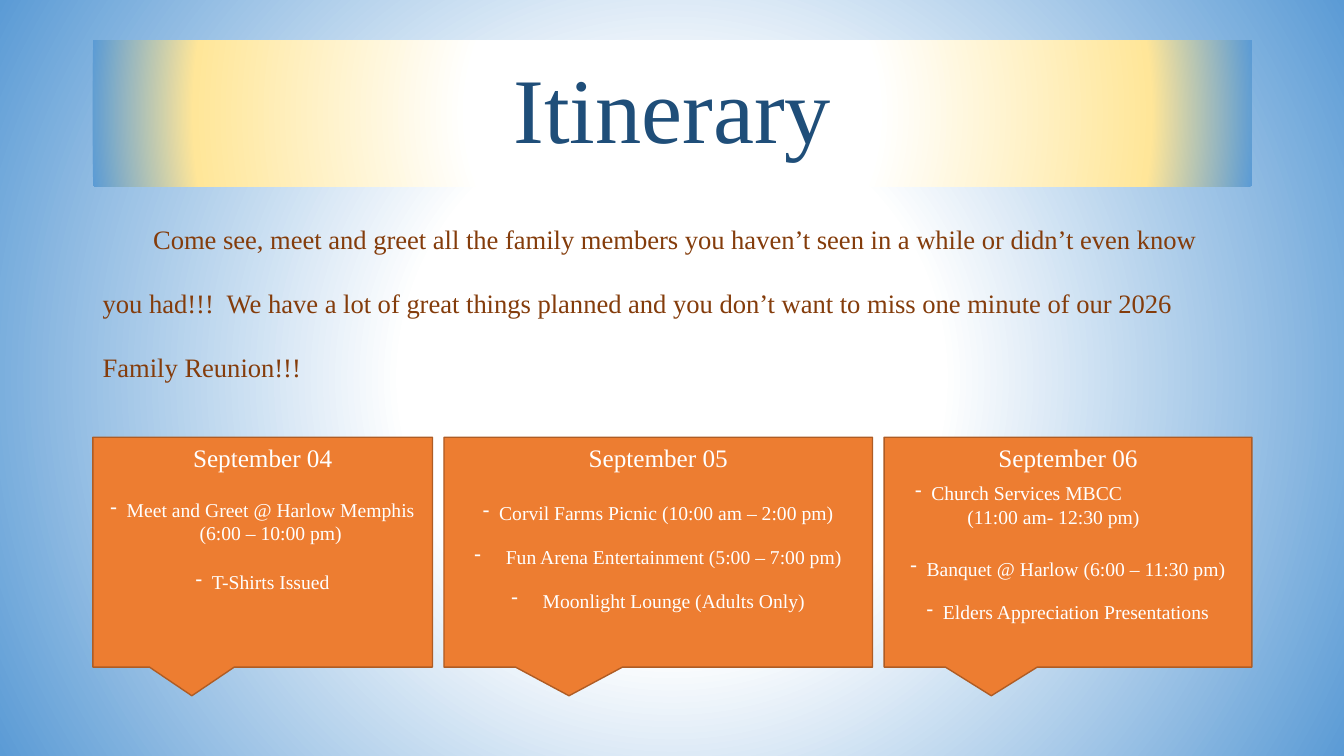
from dataclasses import dataclass

from lxml.etree import SubElement
from pptx import Presentation
from pptx.dml.color import RGBColor
from pptx.enum.shapes import MSO_SHAPE
from pptx.enum.text import MSO_ANCHOR, PP_ALIGN
from pptx.oxml import parse_xml
from pptx.oxml.ns import nsdecls, qn
from pptx.util import Cm, Pt

FONT = "Times New Roman"
WHITE = RGBColor(0xFF, 0xFF, 0xFF)
SKY = RGBColor(0x5B, 0x9B, 0xD5)
CREAM = RGBColor(0xFF, 0xE6, 0x99)
NAVY = RGBColor(0x1F, 0x4E, 0x79)
BROWN = RGBColor(0x84, 0x3C, 0x0B)
ORANGE = RGBColor(0xED, 0x7D, 0x31)
RUST = RGBColor(0xAF, 0x5C, 0x24)

LEFT, WIDTH = 2.34, 29.21
DAY_TOP, DAY_HEIGHT, DAY_GAP = 11.02, 5.79, 0.29
DASH, WIDE_DASH = 0.41, 0.79

INVITATION = (
    "Come see, meet and greet all the family members you haven’t seen in a while "
    "or didn’t even know you had!!!  We have a lot of great things planned and you "
    "don’t want to miss one minute of our 2026 Family Reunion!!!"
)


@dataclass
class Event:
    text: str
    before: float = 6
    after: float = 0
    spacing: float = 1.5
    dash: float = DASH  # hanging width in cm, 0 for no dash
    margin: float = 0  # extra left margin in cm
    align: PP_ALIGN = PP_ALIGN.CENTER


# Each day: heading, callout width in cm, events
DAYS = [
    ("September 04", 8.56, [
        Event("Meet and Greet @ Harlow Memphis (6:00 – 10:00 pm)", 12, 6, 1),
        Event("T-Shirts Issued", 12, 6, 1),
    ]),
    ("September 05", 10.8, [
        Event("Corvil Farms Picnic (10:00 am – 2:00 pm)"),
        Event("Fun Arena Entertainment (5:00 – 7:00 pm)", dash=WIDE_DASH),
        Event("Moonlight Lounge (Adults Only)", dash=WIDE_DASH),
    ]),
    ("September 06", 9.27, [
        Event("Church Services MBCC", 0, 0, 1, margin=0.53, align=PP_ALIGN.LEFT),
        Event("(11:00 am- 12:30 pm)", 0, 6, 1, dash=0, margin=1.85, align=PP_ALIGN.LEFT),
        Event("Banquet @ Harlow (6:00 – 11:30 pm)"),
        Event("Elders Appreciation Presentations"),
    ]),
]


def set_circular_gradient(properties, stops):
    """Replace the solid fill by a gradient running out from the centre."""
    stop_xml = "".join(
        f'<a:gs pos="{percent * 1000}"><a:srgbClr val="{color}"/></a:gs>'
        for percent, color in stops
    )
    gradient = parse_xml(
        f'<a:gradFill {nsdecls("a")} rotWithShape="1"><a:gsLst>{stop_xml}</a:gsLst>'
        '<a:path path="circle">'
        '<a:fillToRect l="50000" t="50000" r="50000" b="50000"/></a:path></a:gradFill>'
    )
    properties.replace(properties.find(qn("a:solidFill")), gradient)


def set_indent(paragraph, margin, first_line, dash=False):
    properties = paragraph._p.get_or_add_pPr()
    properties.set("marL", str(Cm(margin)))
    properties.set("indent", str(Cm(first_line)))
    if dash:
        SubElement(properties, qn("a:buChar")).set("char", "-")


def add_text(paragraph, text, size, color, align=PP_ALIGN.CENTER):
    paragraph.alignment = align
    run = paragraph.add_run()
    run.text = text
    run.font.name = FONT
    run.font.size = Pt(size)
    run.font.color.rgb = color


def add_box(slide, kind, left, top, width, height, fill):
    box = slide.shapes.add_shape(kind, Cm(left), Cm(top), Cm(width), Cm(height))
    box.shadow.inherit = False
    box.fill.solid()
    box.fill.fore_color.rgb = fill
    box.text_frame.word_wrap = True
    return box


def add_banner(slide, title):
    banner = add_box(slide, MSO_SHAPE.RECTANGLE, LEFT, 1.02, WIDTH, 3.68, WHITE)
    set_circular_gradient(banner._element.spPr, [(35, WHITE), (82, CREAM), (100, SKY)])
    banner.line.fill.background()
    banner.text_frame.vertical_anchor = MSO_ANCHOR.MIDDLE
    heading = banner.text_frame.paragraphs[0]
    heading.line_spacing = 0.9
    add_text(heading, title, 66, NAVY)


def add_invitation(slide, text):
    box = slide.shapes.add_textbox(Cm(LEFT), Cm(4.7), Cm(WIDTH), Cm(13.94))
    box.text_frame.word_wrap = True
    paragraph = box.text_frame.paragraphs[0]
    set_indent(paragraph, 0, 1.27)
    paragraph.line_spacing = 2.0
    add_text(paragraph, text, 19, BROWN, PP_ALIGN.LEFT)


def add_day(slide, left, width, date, events):
    callout = add_box(slide, MSO_SHAPE.RECTANGULAR_CALLOUT,
                      left, DAY_TOP, width, DAY_HEIGHT, ORANGE)
    callout.line.color.rgb = RUST
    callout.line.width = Pt(1)
    frame = callout.text_frame
    frame.vertical_anchor = MSO_ANCHOR.TOP
    heading = frame.paragraphs[0]
    heading.space_after = Pt(6)
    add_text(heading, date, 18, WHITE)
    for event in events:
        paragraph = frame.add_paragraph()
        set_indent(paragraph, event.margin + event.dash, -event.dash, event.dash > 0)
        paragraph.line_spacing = float(event.spacing)
        paragraph.space_before = Pt(event.before)
        paragraph.space_after = Pt(event.after)
        add_text(paragraph, event.text, 14, WHITE, event.align)


def main():
    deck = Presentation()
    deck.slide_width, deck.slide_height = Cm(33.87), Cm(19.05)
    slide = deck.slides.add_slide(deck.slide_layouts[6])

    # Background
    slide.background.fill.solid()
    set_circular_gradient(slide._element.find(".//" + qn("p:bgPr")),
                          [(0, WHITE), (35, WHITE), (100, SKY)])

    # Title and invitation
    add_banner(slide, "Itinerary")
    add_invitation(slide, INVITATION)

    # Day callouts, side by side
    left = LEFT
    for date, width, events in DAYS:
        add_day(slide, left, width, date, events)
        left += width + DAY_GAP

    deck.save("out.pptx")


if __name__ == "__main__":
    main()
